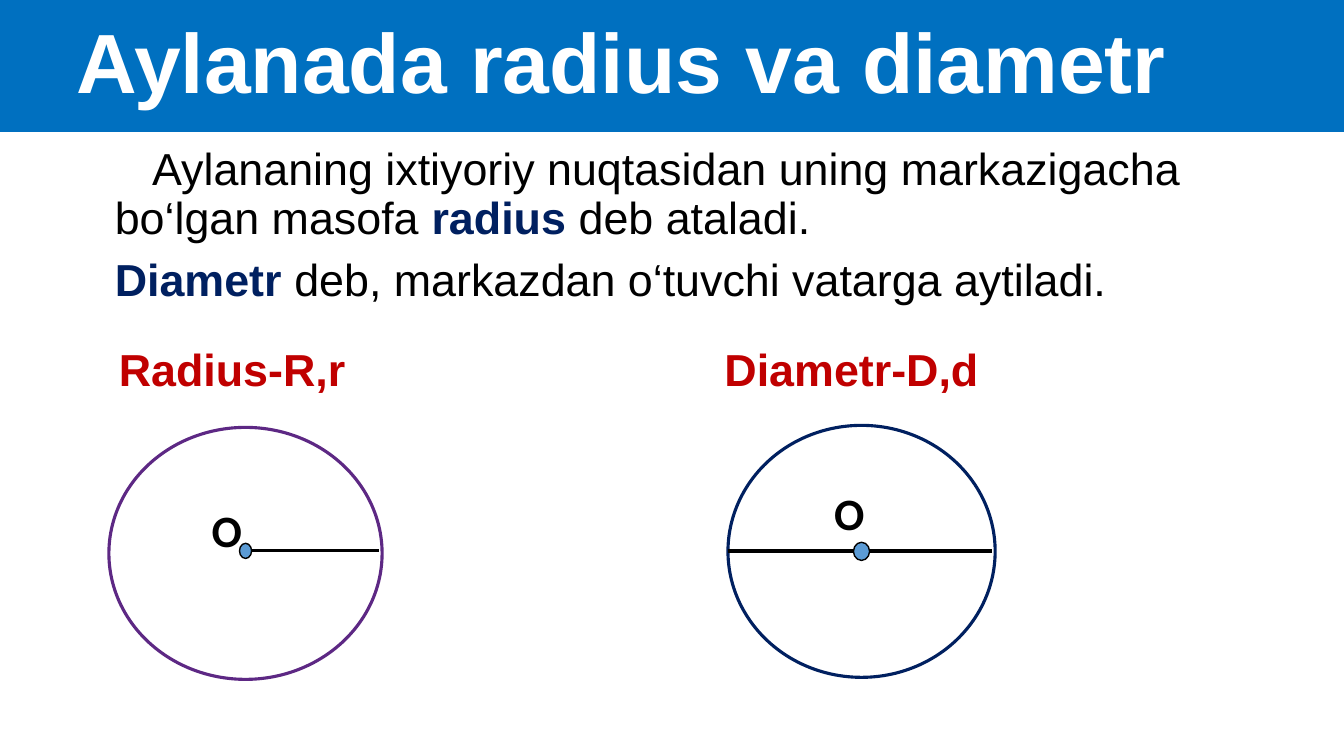
from pptx import Presentation
from pptx.dml.color import RGBColor
from pptx.enum.shapes import MSO_CONNECTOR as Link, MSO_SHAPE as Shape
from pptx.enum.text import MSO_ANCHOR as Anchor, PP_ALIGN as Align
from pptx.util import Inches, Pt
from lxml import etree

WIDE, HIGH = 13.33, 7.5
BLUE, NAVY, RED = "0070C0", "002060", "C00000"
BLACK, WHITE, SKY = "000000", "FFFFFF", "5B9BD5"
NS = "http://schemas.openxmlformats.org/drawingml/2006/main"


def color(code):
    return RGBColor.from_string(code)


def add_run(para, text, size, code, bold=False, font="Arial"):
    run = para.add_run()
    run.text = text
    run.font.name, run.font.size = font, Pt(size)
    run.font.bold = bold
    run.font.color.rgb = color(code)


def add_form(slide, kind, box, fill, edge=None, width=1):
    form = slide.shapes.add_shape(kind, *map(Inches, box))
    form.shadow.inherit = False
    form.fill.solid()
    form.fill.fore_color.rgb = color(fill)
    if edge:
        form.line.color.rgb = color(edge)
        form.line.width = Pt(width)
    else:
        form.line.fill.background()
    return form


def add_label(slide, box, text, code, font="Arial"):
    frame = slide.shapes.add_textbox(*map(Inches, box)).text_frame
    frame.word_wrap = True
    add_run(frame.paragraphs[0], text, 32, code, True, font)


def add_line(slide, ends, width):
    line = slide.shapes.add_connector(Link.STRAIGHT, *map(Inches, ends))
    line.line.color.rgb = color(BLACK)
    line.line.width = Pt(width)
    etree.SubElement(line._element.spPr, f"{{{NS}}}effectLst")


def header(slide, box, text):
    frame = add_form(slide, Shape.RECTANGLE, box, BLUE).text_frame
    frame.word_wrap = True
    frame.vertical_anchor = Anchor.MIDDLE
    frame.margin_left = Inches(0.76)
    para = frame.paragraphs[0]
    para.alignment = Align.LEFT
    para.line_spacing = 0.9
    add_run(para, text, 60, WHITE, True)


def rules(slide, box, items):
    frame = slide.shapes.add_textbox(*map(Inches, box)).text_frame
    frame.word_wrap = True
    for i, (indent, runs) in enumerate(items):
        para = frame.add_paragraph() if i else frame.paragraphs[0]
        para.line_spacing, para.space_before = 0.9, Pt(10)
        props = para._p.get_or_add_pPr()
        props.set("marL", str(Inches(0.25)))
        props.set("indent", str(Inches(indent)))
        for text, key in runs:
            add_run(para, text, 32, NAVY if key else BLACK, key)


def figure(slide, box, name, edge, title, ends, width, mark, dot):
    """Circle with its line, centre and labels, in shares of the box."""
    left, top, wide, high = box

    def spot(x, y):
        return left + x * wide, top + y * high

    add_form(slide, Shape.FLOWCHART_CONNECTOR, box, WHITE, edge, 2.25)
    add_line(slide, spot(*ends[:2]) + spot(*ends[2:]), width)
    add_label(slide, spot(*title) + (1.1 * wide, 0.64), name, RED)
    add_label(slide, spot(*mark) + (0.59, 0.64), "O", BLACK, "Calibri")
    x, y = spot(*dot[:2])
    w, h = dot[2:]
    add_form(slide, Shape.OVAL, (x - w / 2, y - h / 2, w, h), SKY, BLACK)


def main():
    deck = Presentation()
    deck.slide_width, deck.slide_height = Inches(WIDE), Inches(HIGH)
    slide = deck.slides.add_slide(deck.slide_layouts[6])

    # Title band
    header(slide, (0, 0, WIDE, 1.31), "Aylanada radius va diametr")

    # Definitions
    rules(slide, (0.79, 1.41, 12.51, 1.8), [
        (0.37, [("Aylananing ixtiyoriy nuqtasidan uning markazigacha "
                 "bo‘lgan masofa ", False),
                ("radius", True), (" deb ataladi.", False)]),
        (0, [("Diametr", True),
             (" deb, markazdan o‘tuvchi vatarga aytiladi.", False)]),
    ])

    # Radius and diameter
    figure(slide, (1.08, 4.24, 2.71, 2.5), "Radius-R,r", "5D2884",
           title=(0, -0.36), ends=(0.51, 0.49, 0.99, 0.49), width=2.25,
           mark=(0.34, 0.28), dot=(0.5, 0.49, 0.12, 0.15))
    figure(slide, (7.22, 4.22, 2.65, 2.5), "Diametr-D,d", NAVY,
           title=(-0.05, -0.35), ends=(0, 0.5, 0.99, 0.5), width=3,
           mark=(0.36, 0.22), dot=(0.5, 0.5, 0.16, 0.18))

    deck.save("out.pptx")


if __name__ == "__main__":
    main()
